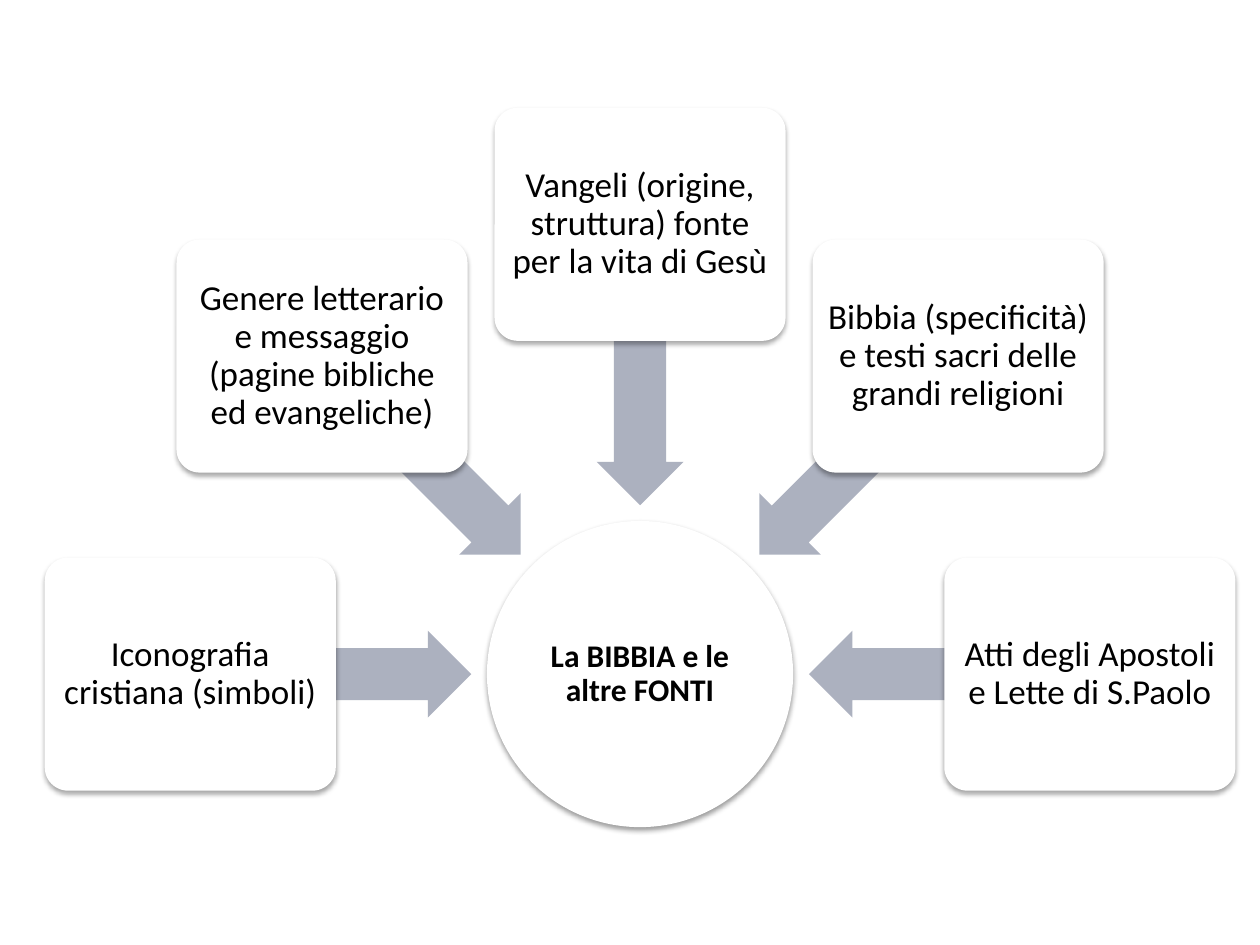
from math import cos, sin, radians
from lxml.etree import SubElement
from pptx import Presentation
from pptx.dml.color import RGBColor
from pptx.enum.shapes import MSO_SHAPE
from pptx.enum.text import MSO_ANCHOR, PP_ALIGN
from pptx.oxml.ns import qn
from pptx.util import Inches, Pt

HUB = "La BIBBIA e le altre FONTI"
SOURCES = [
    (180, "Iconografia cristiana (simboli)"),
    (225, "Genere letterario e messaggio (pagine bibliche ed evangeliche)"),
    (270, "Vangeli (origine, struttura) fonte per la vita di Gesù"),
    (315, "Bibbia (specificità) e testi sacri delle grandi religioni"),
    (0, "Atti degli Apostoli e Lette di S.Paolo"),
]
CENTER = (5.08, 5.35)
CARD_RADIUS, ARROW_RADIUS = 3.57, 2.45
HUB_SIZE, CARD_SIZE, ARROW_SIZE = (2.43, 2.43), (2.31, 1.85), (2.22, 0.69)


def rgb(color):
    return RGBColor.from_string(color)


def add_shape(kind, size, color, angle=0, radius=0):
    w, h = size
    x = CENTER[0] + radius * cos(radians(angle))
    y = CENTER[1] + radius * sin(radians(angle))
    sp = s.shapes.add_shape(kind, Inches(x - w / 2), Inches(y - h / 2), Inches(w), Inches(h))
    sp.shadow.inherit = False
    sp.fill.solid()
    sp.fill.fore_color.rgb = rgb(color)
    sp.line.fill.background()
    return sp


def add_shadow(sp, dist, alpha):
    effects = sp._element.spPr.find(qn("a:effectLst"))
    shadow = SubElement(effects, qn("a:outerShdw"), blurRad=str(Pt(3.1)), dist=str(Pt(dist)),
                        dir="5400000", rotWithShape="0")
    color = SubElement(shadow, qn("a:srgbClr"), val="000000")
    SubElement(color, qn("a:alpha"), val=str(alpha * 1000))


def set_text(sp, text, size, inset, bold=False):
    tf = sp.text_frame
    tf.text = text
    tf.word_wrap = True
    tf.vertical_anchor = MSO_ANCHOR.MIDDLE
    tf.margin_left = tf.margin_right = tf.margin_top = tf.margin_bottom = Inches(inset)
    p = tf.paragraphs[0]
    p.alignment = PP_ALIGN.CENTER
    p.line_spacing = 0.9
    font = p.runs[0].font
    font.name, font.size, font.bold = "Calibri", Pt(size), bold
    font.color.rgb = rgb("000000")


prs = Presentation()
prs.slide_width, prs.slide_height = Inches(10), Inches(7.5)
s = prs.slides.add_slide(prs.slide_layouts[6])

hub = add_shape(MSO_SHAPE.OVAL, HUB_SIZE, "FFFFFF")
add_shadow(hub, 1.6, 38)
set_text(hub, HUB, 18, 0.01, bold=True)

for angle, text in SOURCES:
    arrow = add_shape(MSO_SHAPE.LEFT_ARROW, ARROW_SIZE, "ACB1BF", angle, ARROW_RADIUS)
    arrow.adjustments[0] = 0.6
    arrow.adjustments[1] = 0.5
    arrow.rotation = angle
    card = add_shape(MSO_SHAPE.ROUNDED_RECTANGLE, CARD_SIZE, "FFFFFF", angle, CARD_RADIUS)
    card.adjustments[0] = 0.1
    add_shadow(card, 1.8, 35)
    set_text(card, text, 20, 0.04)

prs.save("out.pptx")
